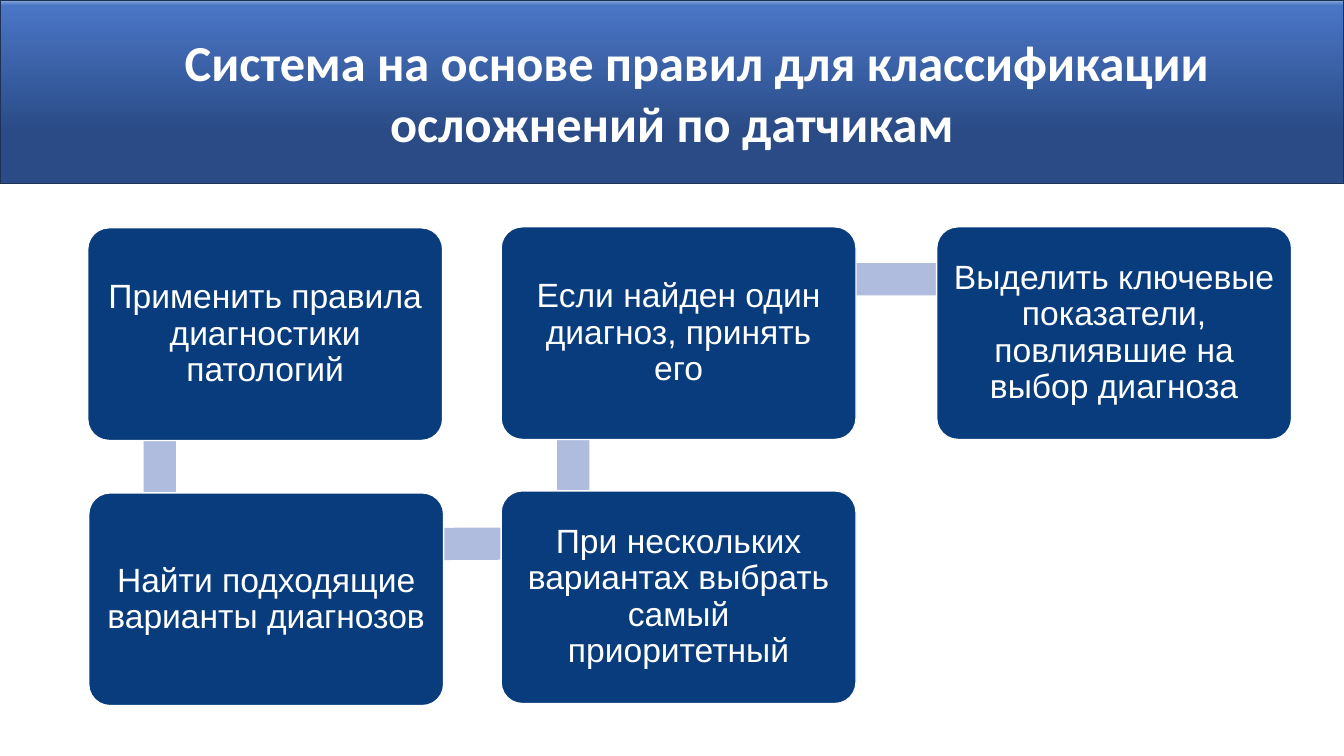
"""Slide with a rule-based flow for classifying complications by sensors."""
from copy import deepcopy

from pptx import Presentation
from pptx import util as u
from pptx.dml.color import RGBColor
from pptx.enum import shapes, text


def rgb(value):
    return RGBColor.from_string(value)


def write(tf, content, font="Arial", size=24, color="FFFFFF", bold=False, spacing=1.0):
    tf.word_wrap = True
    tf.vertical_anchor = text.MSO_ANCHOR.MIDDLE
    p = tf.paragraphs[0]
    p.alignment = text.PP_ALIGN.CENTER
    p.line_spacing = spacing
    r = p.add_run()
    r.text = content
    r.font.name, r.font.size, r.font.bold = font, u.Pt(size), bold
    r.font.color.rgb = rgb(color)


class Deck:
    navy, pale, white, edge = "083C7D", "B0BCDE", "FFFFFF", "1E3256"
    stops = [(0.28, "2A4B86"), (0.97, "4A76C6"), (1.0, "8FAADC")]
    card_w, card_h, bar_h = 3.52, 2.11, 0.32

    def __init__(self):
        self.prs = Presentation()
        self.prs.slide_width, self.prs.slide_height = u.Inches(13.33), u.Inches(7.5)
        self.s = self.prs.slides.add_slide(self.prs.slide_layouts[6])

    def shape(self, kind, x, y, w, h, fill=None, line=None):
        sp = self.s.shapes.add_shape(kind, *map(u.Inches, (x, y, w, h)))
        sp.shadow.inherit = False
        if fill:
            sp.fill.solid()
            sp.fill.fore_color.rgb = rgb(fill)
        if line:
            sp.line.color.rgb = rgb(line)
            sp.line.width = u.Pt(1)
        else:
            sp.line.fill.background()
        return sp

    def banner(self, content):
        sp = self.shape(shapes.MSO_SHAPE.RECTANGLE, 0, 0, 13.33, 1.82, line=self.edge)
        sp.fill.gradient()
        sp.fill.gradient_angle = 90
        stop_list = sp._element.spPr.xpath("a:gradFill/a:gsLst")[0]
        stop_list.append(deepcopy(stop_list[-1]))
        for stop, (position, color) in zip(sp.fill.gradient_stops, self.stops):
            stop.position = position
            stop.color.rgb = rgb(color)
        write(sp.text_frame, content, font="Calibri", size=36, bold=True)

    def bar(self, x, y, length, rotation=0):
        sp = self.shape(shapes.MSO_SHAPE.RECTANGLE, x, y, length, self.bar_h, self.pale)
        sp.rotation = rotation

    def card(self, x, y, content):
        sp = self.shape(shapes.MSO_SHAPE.ROUNDED_RECTANGLE, x, y,
                        self.card_w, self.card_h, self.navy, self.white)
        sp.adjustments[0] = 0.1
        tf = sp.text_frame
        tf.margin_left = tf.margin_right = tf.margin_top = tf.margin_bottom = u.Inches(0.1)
        write(tf, content, spacing=0.9)


def main():
    deck = Deck()
    deck.banner("\tСистема на основе правил для классификации осложнений по датчикам")
    bars = [(0.27, 3.94, 2.63, 90), (1.59, 5.24, 4.09, 359.7),
            (4.38, 3.91, 2.61, 270), (5.69, 2.61, 4.31, 0)]
    for bar in bars:
        deck.bar(*bar)
    cards = [
        (0.87, 2.26, "Применить правила диагностики патологий"),
        (0.88, 4.89, "Найти подходящие варианты диагнозов"),
        (4.97, 4.87, "При нескольких вариантах выбрать самый приоритетный"),
        (4.97, 2.25, "Если найден один диагноз, принять его"),
        (9.29, 2.25, "Выделить ключевые показатели, повлиявшие на выбор диагноза"),
    ]
    for card in cards:
        deck.card(*card)
    deck.prs.save("out.pptx")


if __name__ == "__main__":
    main()
